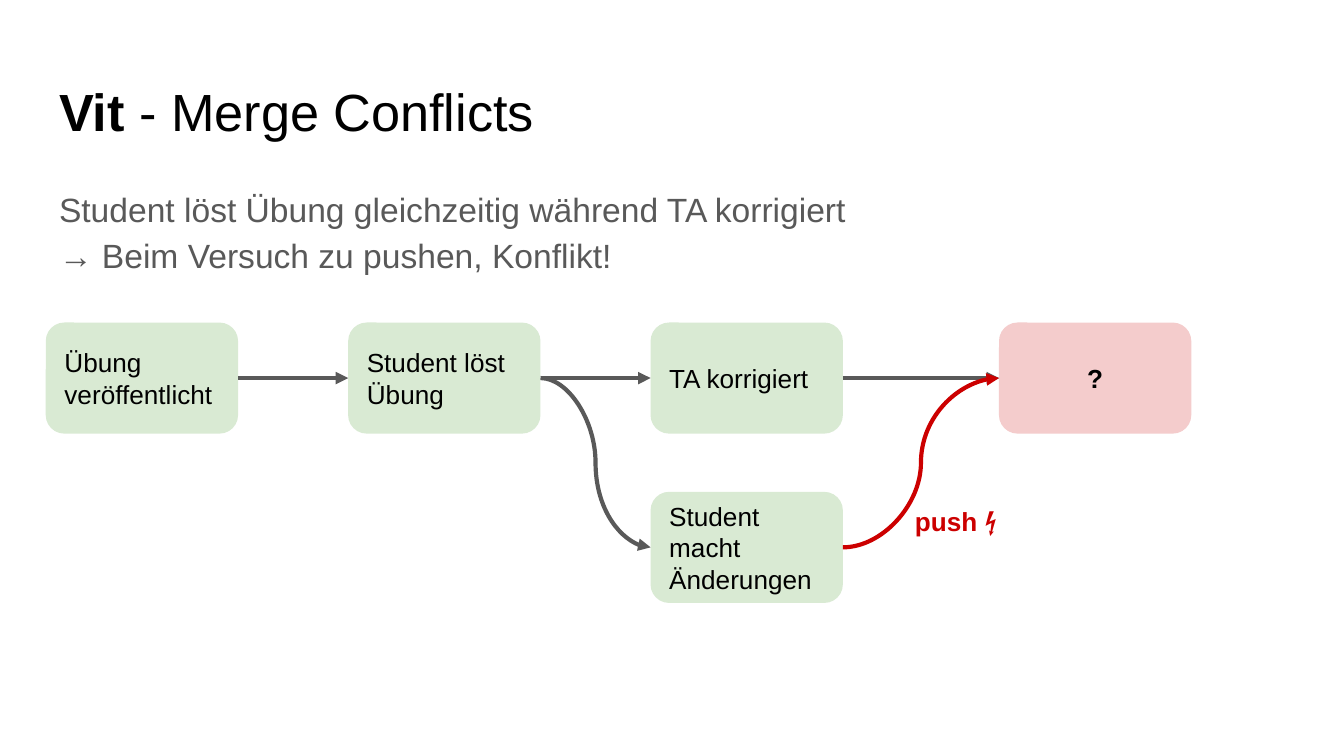
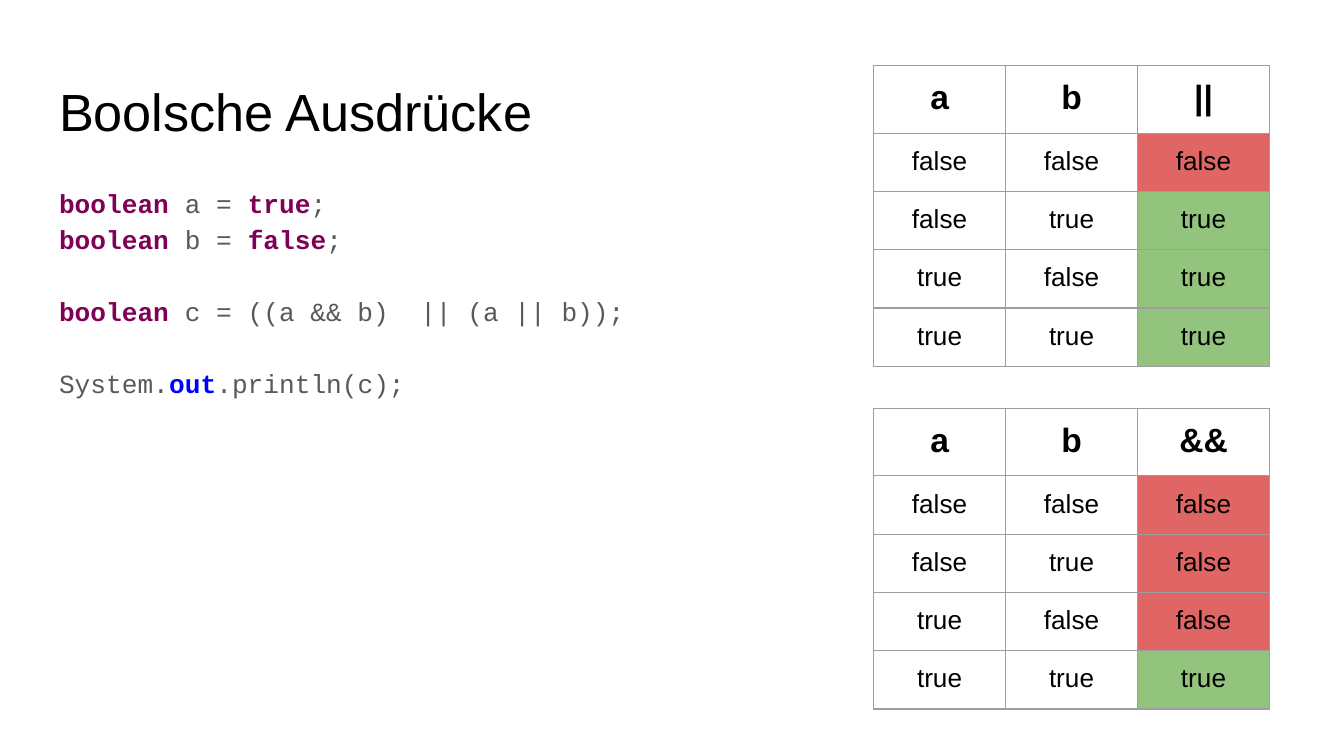
from lxml import etree
from pptx import Presentation
from pptx import util as u
from pptx.dml.color import RGBColor
from pptx.enum import shapes, text
from pptx.oxml import ns

Pt = u.Pt

# Colours
BLACK = RGBColor(0x00, 0x00, 0x00)
GREY = RGBColor(0x59, 0x59, 0x59)
RED = RGBColor(0xCC, 0x00, 0x00)
KEYWORD = RGBColor(0x7F, 0x00, 0x55)
FIELD = RGBColor(0x00, 0x00, 0xFF)
STEP_GREEN = RGBColor(0xD9, 0xEA, 0xD3)
STEP_RED = RGBColor(0xF4, 0xCC, 0xCC)
CELL_RED = RGBColor(0xE0, 0x66, 0x66)
CELL_GREEN = RGBColor(0x93, 0xC4, 0x7D)
GRID = RGBColor(0x9E, 0x9E, 0x9E)

# Text formats
TITLE = {"name": "Arial", "size": Pt(28), "bold": False, "color": BLACK}
BODY = {**TITLE, "size": Pt(18), "color": GREY}
LABEL = {**TITLE, "size": Pt(14)}
HEADER = {**TITLE, "size": Pt(18), "bold": True}
CODE = {**BODY, "name": "Courier New", "size": Pt(14)}
CODE_KEYWORD = {**CODE, "bold": True, "color": KEYWORD}
CODE_FIELD = {**CODE, "bold": True, "color": FIELD}

# Layout
LEFT, WIDTH = 24.55, 671
BODY_TOP = 90.7
STEP_SIZE = 103, 59.5
STEP_TOP, BRANCH_TOP = 172.8, 263.5
STEP_PITCH = 162
CODE_LINE = 19.3
INSET = Pt(7.2)


def set_values(target, values):
    for name, value in values.items():
        if name == "color":
            target.color.rgb = value
        else:
            setattr(target, name, value)


def fill_para(para, spans, **para_format):
    """Write (wording, format) spans; a newline becomes a line break."""
    set_values(para, para_format)
    for wording, span_format in spans:
        for index, line in enumerate(wording.split("\n")):
            if index:
                para.add_line_break()
            span = para.add_run()
            span.text = line
            set_values(span.font, span_format)


def set_frame(frame, anchor=text.MSO_ANCHOR.TOP):
    set_values(frame, {
        "word_wrap": True, "vertical_anchor": anchor,
        "margin_left": INSET, "margin_right": INSET,
        "margin_top": INSET, "margin_bottom": INSET})


def add_text(page, left, top, width, height, paras):
    """Add a text box from (spans, paragraph format) pairs."""
    box = page.shapes.add_textbox(Pt(left), Pt(top), Pt(width), Pt(height))
    frame = box.text_frame
    set_frame(frame)
    for index, (spans, para_format) in enumerate(paras):
        para = frame.add_paragraph() if index else frame.paragraphs[0]
        fill_para(para, spans, **para_format)


def add_title(page, *spans):
    add_text(page, LEFT, 35.3, WIDTH, 45, [(spans, {})])


def add_step(page, left, top, wording, fill=STEP_GREEN, bold=False,
             align=text.PP_ALIGN.LEFT):
    box = page.shapes.add_shape(
        shapes.MSO_SHAPE.ROUNDED_RECTANGLE,
        Pt(left), Pt(top), *map(Pt, STEP_SIZE))
    box.shadow.inherit = False
    box.fill.solid()
    box.fill.fore_color.rgb = fill
    box.line.fill.background()
    set_frame(box.text_frame, text.MSO_ANCHOR.MIDDLE)
    fill_para(box.text_frame.paragraphs[0],
              [(wording, {**LABEL, "bold": bold})], alignment=align)
    return box


def add_arrow(page, source, target, color=GREY, kind=shapes.MSO_CONNECTOR.CURVE):
    """Join the right side of one step to the left side of another."""
    arrow = page.shapes.add_connector(
        kind, source.left + source.width, source.top + source.height // 2,
        target.left, target.top + target.height // 2)
    arrow.begin_connect(source, 3)
    arrow.end_connect(target, 1)
    arrow.line.width = Pt(2.25)
    arrow.line.color.rgb = color
    etree.SubElement(arrow.line._get_or_add_ln(), ns.qn("a:tailEnd"), type="triangle")
    etree.SubElement(arrow._element.spPr, ns.qn("a:effectLst"))


def add_borders(cell):
    props = cell._tc.get_or_add_tcPr()
    for side in "LRTB":
        line = etree.SubElement(props, ns.qn(f"a:ln{side}"), w=str(Pt(0.75)))
        solid = etree.SubElement(line, ns.qn("a:solidFill"))
        etree.SubElement(solid, ns.qn("a:srgbClr"), val=str(GRID))


def add_truth_table(page, top, operator, combine):
    rows = [("a", "b", operator)]
    for a in (False, True):
        for b in (False, True):
            rows.append([str(value).lower() for value in (a, b, combine(a, b))])
    heights = [34.6] + [30.1] * 4
    table = page.shapes.add_table(
        5, 3, Pt(468), Pt(top), Pt(212.1), Pt(sum(heights))).table
    table.first_row = table.horz_banding = False
    for column in table.columns:
        column.width = Pt(70.7)
    for row_index, wordings in enumerate(rows):
        table.rows[row_index].height = Pt(heights[row_index])
        for column_index, wording in enumerate(wordings):
            cell = table.cell(row_index, column_index)
            set_values(cell, {f"margin_{side}": INSET
                              for side in ("left", "right", "top", "bottom")})
            add_borders(cell)
            if row_index and column_index == 2:
                cell.fill.solid()
                cell.fill.fore_color.rgb = CELL_GREEN if wording == "true" else CELL_RED
            else:
                cell.fill.background()
            fill_para(cell.text_frame.paragraphs[0],
                      [(wording, LABEL if row_index else HEADER)],
                      alignment=text.PP_ALIGN.CENTER)


def build_conflicts(page):
    add_title(page, ("Vit", {**TITLE, "bold": True}), (" - Merge Conflicts", TITLE))
    message = ("Student löst Übung gleichzeitig während TA korrigiert \n"
               "→ Beim Versuch zu pushen, Konflikt!")
    add_text(page, LEFT, BODY_TOP, WIDTH, 60,
             [([(message, BODY)], {"line_spacing": 1.15, "space_after": Pt(16)})])

    # Workflow steps
    publish, solve, correct = [
        add_step(page, LEFT + index * STEP_PITCH, STEP_TOP, wording)
        for index, wording in enumerate(
            ("Übung veröffentlicht", "Student löst Übung", "TA korrigiert"))]
    unknown = add_step(page, 535.2, STEP_TOP, "?", STEP_RED, True,
                       text.PP_ALIGN.CENTER)
    change = add_step(page, LEFT + 2 * STEP_PITCH, BRANCH_TOP,
                      "Student macht Änderungen")
    add_text(page, 483, BRANCH_TOP, 71.3, 31.7,
             [([("push ⚡", {**LABEL, "bold": True, "color": RED})], {})])

    # Arrows
    add_arrow(page, publish, solve, kind=shapes.MSO_CONNECTOR.STRAIGHT)
    add_arrow(page, solve, correct)
    add_arrow(page, correct, unknown)
    add_arrow(page, solve, change)
    add_arrow(page, change, unknown, RED)


def build_booleans(page):
    # Code, with a wider gap before each new group
    line = {"line_spacing": 1.15}
    group = {**line, "space_before": Pt(CODE_LINE)}
    boolean = ("boolean", CODE_KEYWORD)
    end = (";", CODE)
    add_text(page, LEFT, BODY_TOP, WIDTH, 269.3, [
        ([boolean, (" a = ", CODE), ("true", CODE_KEYWORD), end], line),
        ([boolean, (" b = ", CODE), ("false", CODE_KEYWORD), end], line),
        ([boolean, (" c = ((a && b)  || (a || b));", CODE)], group),
        ([("System.", CODE), ("out", CODE_FIELD), (".println(c);", CODE)], group)])

    # Truth tables
    add_truth_table(page, 35.3, "||", lambda a, b: a or b)
    add_truth_table(page, 218.9, "&&", lambda a, b: a and b)
    add_title(page, ("Boolsche Ausdrücke", TITLE))


def main():
    deck = Presentation()
    deck.slide_width, deck.slide_height = Pt(720), Pt(405)
    for build in (build_conflicts, build_booleans):
        build(deck.slides.add_slide(deck.slide_layouts[6]))
    deck.save("out.pptx")


if __name__ == "__main__":
    main()
